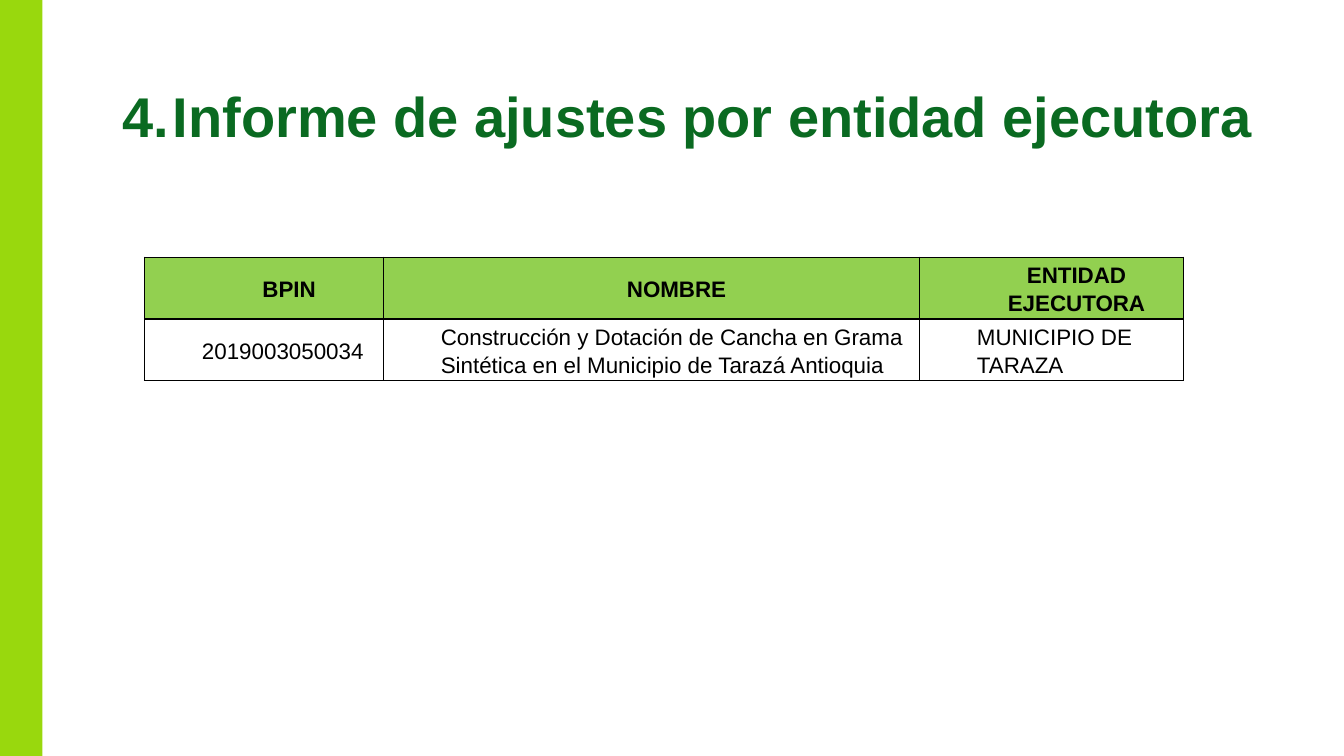
from lxml.etree import SubElement
from pptx import Presentation
from pptx.dml.color import RGBColor
from pptx.enum.shapes import MSO_SHAPE as Shape
from pptx.enum.text import MSO_ANCHOR as Anchor, PP_ALIGN as Align
from pptx.oxml.ns import qn
from pptx.util import Cm, Pt


def color(hex_code):
    return RGBColor.from_string(hex_code)


class ReportSlide:
    """Holds the report style and the slide being filled."""

    font_name = "Arial"
    title_color = "0A6A21"
    band_color = "99D80D"
    header_color = "92D050"
    ink = "000000"

    def __init__(self, presentation):
        self.slide = presentation.slides.add_slide(presentation.slide_layouts[6])

    def format_runs(self, paragraph, size, hex_code, bold):
        for run in paragraph.runs:
            run.font.name = self.font_name
            run.font.size = Pt(size)
            run.font.bold = bold
            run.font.color.rgb = color(hex_code)

    def add_title(self, text, left, top, width, height):
        shape = self.slide.shapes.add_textbox(Cm(left), Cm(top), Cm(width), Cm(height))
        shape.text_frame.word_wrap = True
        paragraph = shape.text_frame.paragraphs[0]
        paragraph.text = text
        paragraph.alignment = Align.CENTER
        self.format_runs(paragraph, 40, self.title_color, True)

    def add_band(self, left, top, width, height):
        shape = self.slide.shapes.add_shape(
            Shape.RECTANGLE, Cm(left), Cm(top), Cm(width), Cm(height))
        shape.shadow.inherit = False
        shape.fill.solid()
        shape.fill.fore_color.rgb = color(self.band_color)
        shape.line.fill.background()

    def add_table(self, rows, left, top, column_widths, row_height):
        table = self.slide.shapes.add_table(
            len(rows), len(column_widths), Cm(left), Cm(top),
            Cm(sum(column_widths)), Cm(row_height * len(rows))).table
        for column, width in zip(table.columns, column_widths):
            column.width = Cm(width)
        for row_index, texts in enumerate(rows):
            for column_index, text in enumerate(texts):
                cell = table.cell(row_index, column_index)
                self.fill_cell(cell, text, row_index == 0)
            cell.text_frame.paragraphs[0].space_after = Pt(10)

    def fill_cell(self, cell, text, is_header):
        cell.margin_left = cell.margin_right = Cm(0.18)
        cell.margin_top = cell.margin_bottom = Cm(0)
        cell.vertical_anchor = Anchor.MIDDLE
        self.add_borders(cell)
        if is_header:
            cell.fill.solid()
            cell.fill.fore_color.rgb = color(self.header_color)
        else:
            cell.fill.background()
        paragraph = cell.text_frame.paragraphs[0]
        paragraph.text = text
        paragraph.alignment = Align.CENTER if is_header else Align.LEFT
        paragraph.line_spacing = 1.15
        paragraph._p.get_or_add_pPr().set("marL", str(Cm(1.27)))
        self.format_runs(paragraph, 16, self.ink, is_header)

    def add_borders(self, cell):
        properties = cell._tc.get_or_add_tcPr()
        for side in ("lnL", "lnR", "lnT", "lnB"):
            border = SubElement(properties, qn(f"a:{side}"), w=str(Pt(1)))
            fill = SubElement(border, qn("a:solidFill"))
            SubElement(fill, qn("a:srgbClr"), val=self.ink)


def main():
    presentation = Presentation()
    presentation.slide_width = Cm(33.87)
    presentation.slide_height = Cm(19.05)
    report = ReportSlide(presentation)
    report.add_title("4.\tInforme de ajustes por entidad ejecutora", 2.24, 1.93, 30.15, 1.96)
    report.add_band(0, 0, 1.07, 19.05)
    rows = [
        ("BPIN", "NOMBRE", "ENTIDAD EJECUTORA"),
        ("2019003050034",
         "Construcción y Dotación de Cancha en Grama Sintética en el Municipio de Tarazá Antioquia",
         "MUNICIPIO DE TARAZA"),
    ]
    report.add_table(rows, 3.64, 6.48, (6.02, 13.51, 6.65), 1.55)
    presentation.save("out.pptx")


if __name__ == "__main__":
    main()
